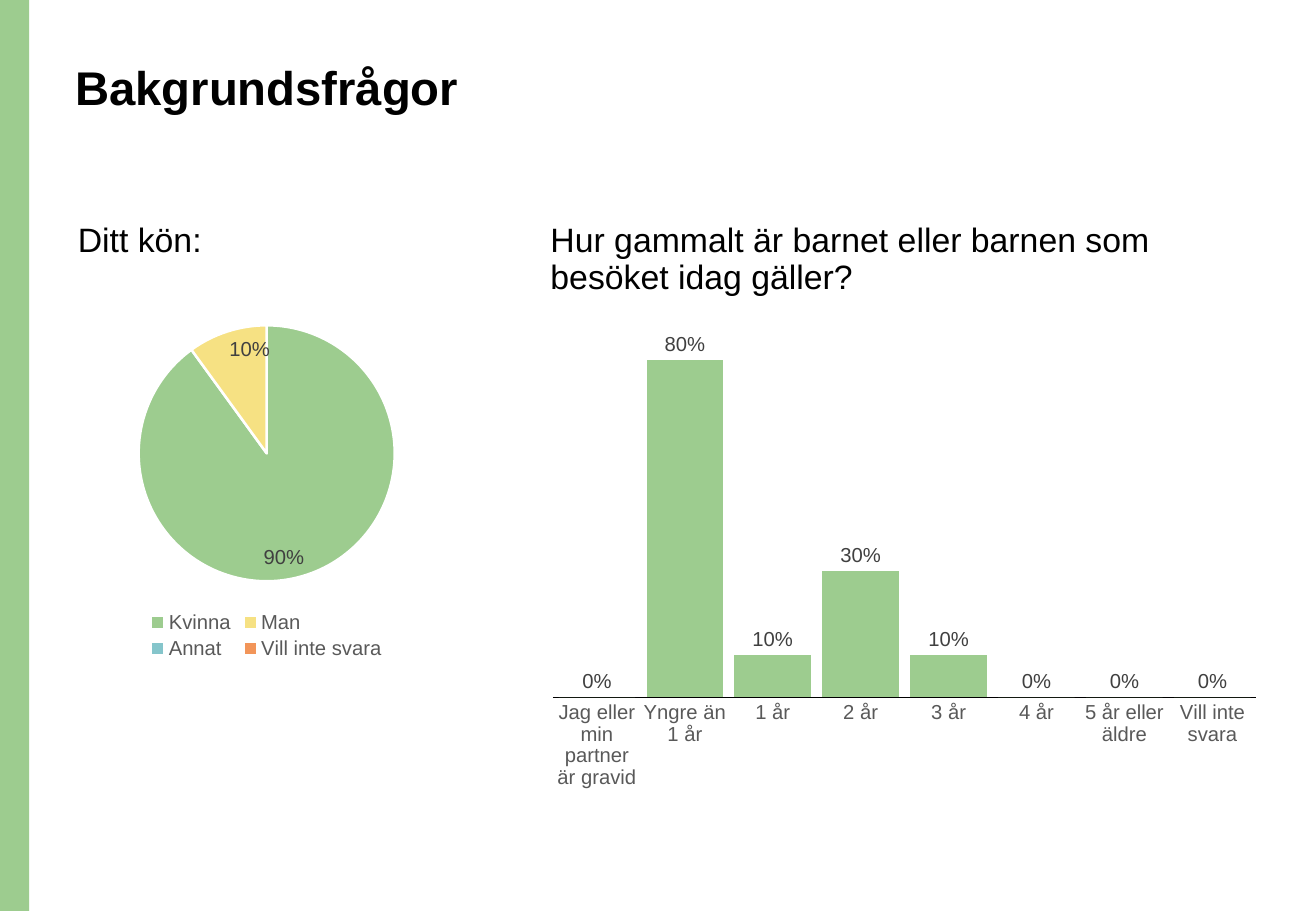
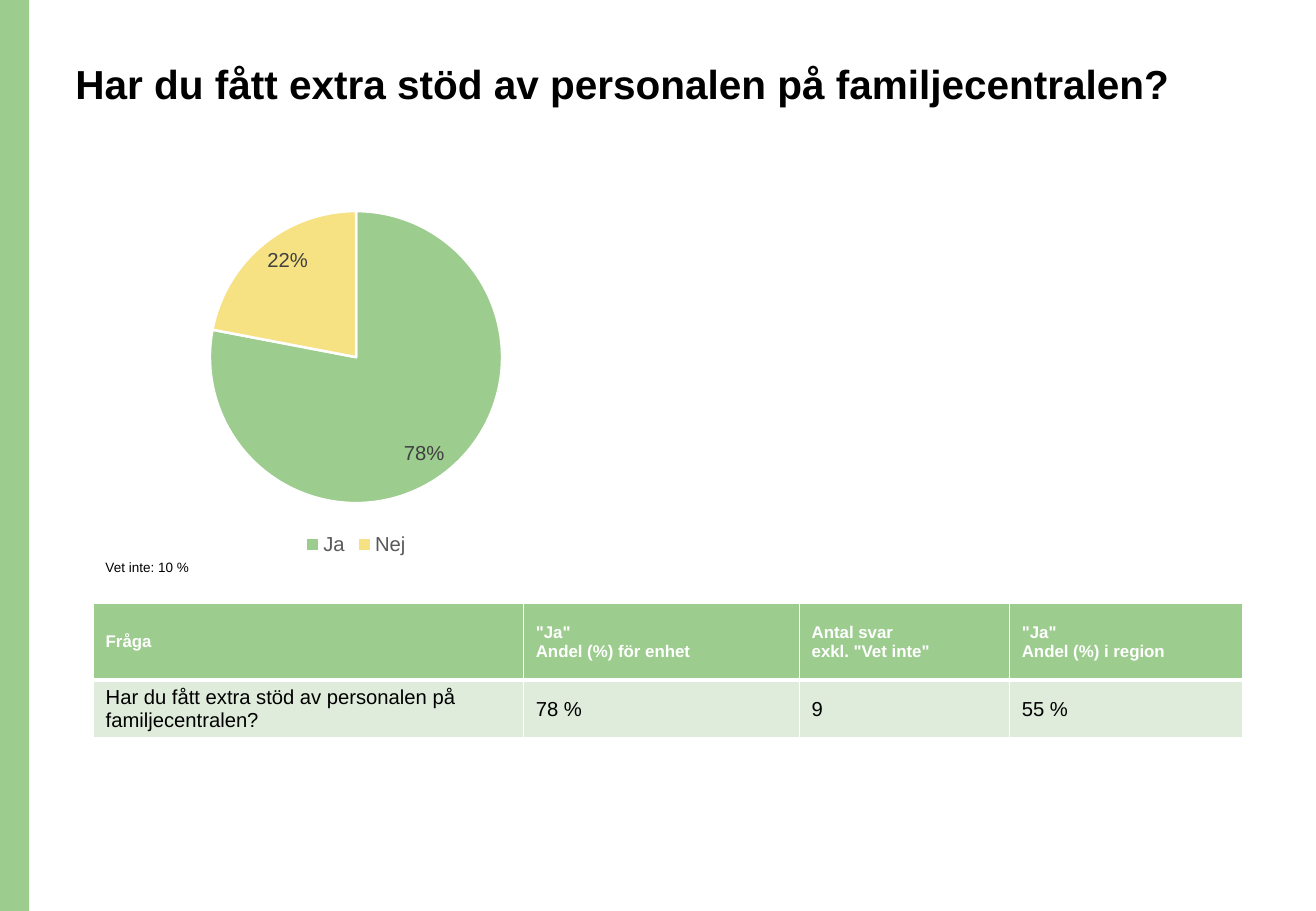
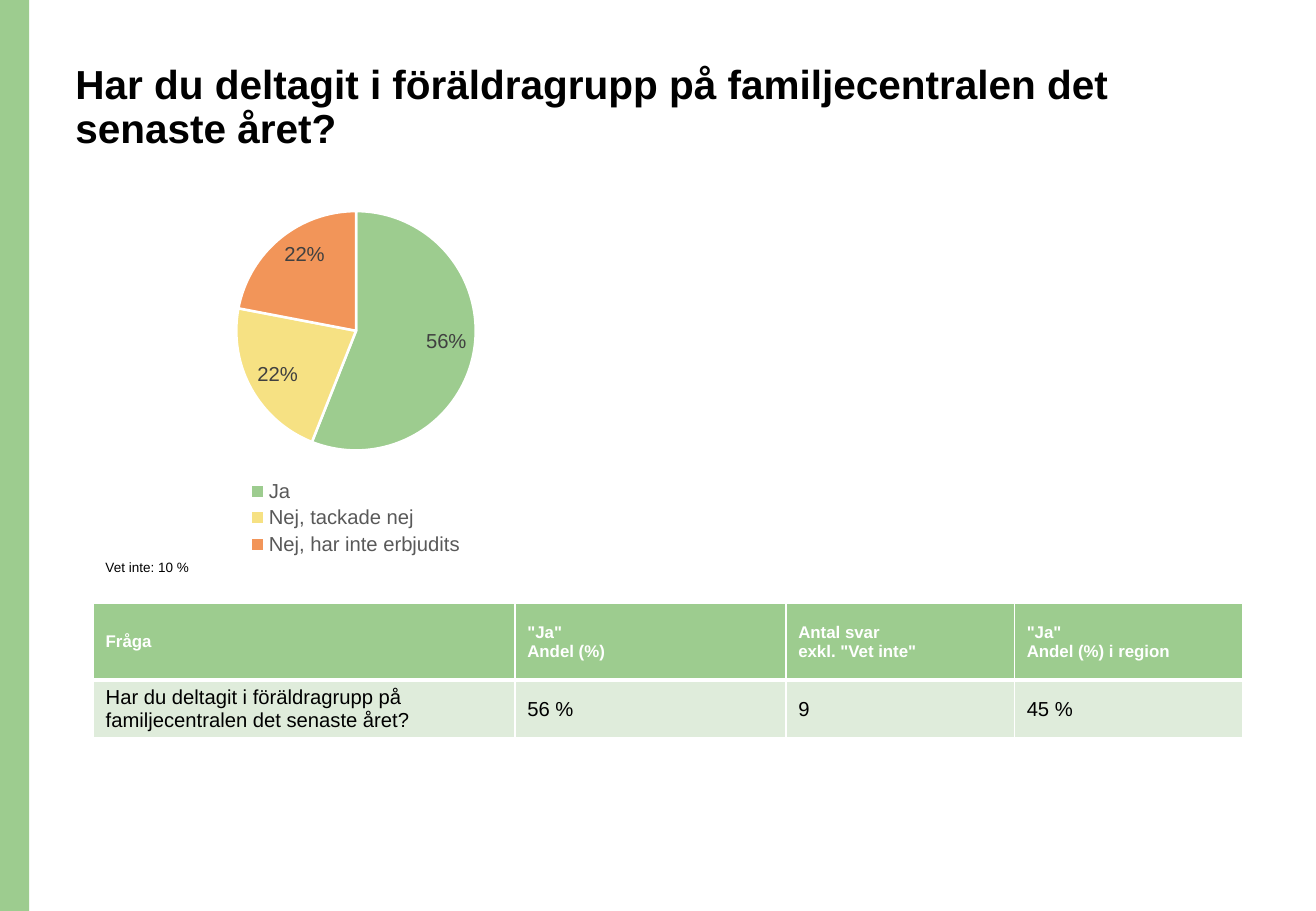
"""Build three survey result slides with charts and tables."""
from dataclasses import dataclass

import lxml.etree
import pptx
import pptx.chart.chart
import pptx.chart.data
import pptx.dml.color
import pptx.dml.fill
import pptx.enum.chart
import pptx.enum.shapes
import pptx.enum.text
import pptx.oxml.ns
import pptx.presentation
import pptx.shapes.base
import pptx.slide
import pptx.table
import pptx.text.text
import pptx.util

PX = 9144
FONT = "Arial"
COLORS = {
    "green": "9DCC8F",
    "yellow": "F6E183",
    "blue": "85C5CB",
    "orange": "F29559",
    "pale": "DFECDB",
    "white": "FFFFFF",
    "black": "000000",
    "label": "404040",
    "axis": "595959",
}
TITLE_BOX = (52, 48, 934, 102)
PIE_FORMAT = '[<0.01]"";[>0.01]0%'
TITLE_ONLY, COMPARISON = 5, 4

Box = tuple[int, int, int, int]


@dataclass(frozen=True)
class Answer:
    """One answer option with its share and colour."""

    label: str
    share: float
    color: str = "green"


@dataclass(frozen=True)
class Question:
    """One question slide with a pie and a summary table."""

    title: str
    answers: list[Answer]
    columns: list[int]
    unit_header: str
    row: list[str]


GENDER = [
    Answer("Kvinna", 0.9),
    Answer("Man", 0.1, "yellow"),
    Answer("Annat", 0, "blue"),
    Answer("Vill inte svara", 0, "orange"),
]
CHILD_AGE = [
    Answer("Jag eller min partner är gravid", 0),
    Answer("Yngre än 1 år", 0.8),
    Answer("1 år", 0.1),
    Answer("2 år", 0.3),
    Answer("3 år", 0.1),
    Answer("4 år", 0),
    Answer("5 år eller äldre", 0),
    Answer("Vill inte svara", 0),
]
QUESTIONS = [
    Question(
        "Har du fått extra stöd av personalen på familjecentralen?",
        [Answer("Ja", 0.78), Answer("Nej", 0.22, "yellow")],
        [354, 227, 173, 192],
        '"Ja"\nAndel (%) för enhet',
        ["78 %", "9", "55 %"],
    ),
    Question(
        "Har du deltagit i föräldragrupp på familjecentralen det senaste året?",
        [
            Answer("Ja", 0.56),
            Answer("Nej, tackade nej", 0.22, "yellow"),
            Answer("Nej, har inte erbjudits", 0.22, "orange"),
        ],
        [347, 223, 188, 188],
        '"Ja"\nAndel (%)',
        ["56 %", "9", "45 %"],
    ),
]


def rgb(name: str) -> pptx.dml.color.RGBColor:
    """Return a named colour."""
    return pptx.dml.color.RGBColor.from_string(COLORS[name])


def emu(box: Box) -> list[int]:
    """Turn a px box into EMU."""
    return [v * PX for v in box]


def paint(fill: pptx.dml.fill.FillFormat, color: str) -> None:
    """Make a fill solid in a named colour."""
    fill.solid()
    fill.fore_color.rgb = rgb(color)


def style(font: pptx.text.text.Font, size: int, color: str, bold: bool = False) -> None:
    """Set face, size, colour and weight of a font."""
    font.name = FONT
    font.size = pptx.util.Pt(size)
    font.bold = bold
    font.color.rgb = rgb(color)


def put_text(
    tf: pptx.text.text.TextFrame,
    text: str,
    *,
    size: int,
    color: str = "black",
    bold: bool = False,
    spacing: float = 1.0,
) -> None:
    """Write each line of text as a formatted paragraph."""
    for i, line in enumerate(text.split("\n")):
        p = tf.add_paragraph() if i else tf.paragraphs[0]
        p.alignment = pptx.enum.text.PP_ALIGN.LEFT
        p.line_spacing = spacing
        p.space_before = pptx.util.Pt(0)
        r = p.add_run()
        r.text = line
        style(r.font, size, color, bold)


def fill_placeholder(
    sp: pptx.shapes.base.BaseShape, box: Box, text: str, *, size: int, bold: bool = False
) -> None:
    """Move a placeholder and write its text from the top."""
    sp.left, sp.top, sp.width, sp.height = emu(box)
    tf = sp.text_frame
    tf.auto_size = pptx.enum.text.MSO_AUTO_SIZE.NONE
    tf.vertical_anchor = pptx.enum.text.MSO_ANCHOR.TOP
    put_text(tf, text, size=size, bold=bold, spacing=0.9)


def add_page(
    prs: pptx.presentation.Presentation, layout: int, title: str, size: int
) -> pptx.slide.Slide:
    """Add a slide with its title."""
    s = prs.slides.add_slide(prs.slide_layouts[layout])
    fill_placeholder(s.shapes.title, TITLE_BOX, title, size=size, bold=True)
    return s


def add_band(prs: pptx.presentation.Presentation, s: pptx.slide.Slide) -> None:
    """Put the side band on the slide master."""
    sp = s.shapes.add_shape(
        pptx.enum.shapes.MSO_SHAPE.RECTANGLE, *emu((0, 0, 24, 750))
    )
    sp.shadow.inherit = False
    paint(sp.fill, "green")
    sp.line.fill.background()
    sp.element.nvSpPr.cNvPr.set("id", "20")
    prs.slide_master.shapes.element.insert(2, sp.element)


def add_answers(
    s: pptx.slide.Slide,
    kind: pptx.enum.chart.XL_CHART_TYPE,
    box: Box,
    answers: list[Answer],
    number_format: str,
    position: pptx.enum.chart.XL_LABEL_POSITION,
) -> pptx.chart.chart.Chart:
    """Add a chart of answer shares with value labels."""
    data = pptx.chart.data.CategoryChartData()
    data.categories = [a.label for a in answers]
    data.add_series("Series 1", [a.share for a in answers])
    chart = s.shapes.add_chart(kind, *emu(box), data).chart
    chart.has_title = False
    chart.has_legend = False
    style(chart.font, 10, "black")
    plot = chart.plots[0]
    plot.has_data_labels = True
    labels = plot.data_labels
    labels.show_value = True
    labels.show_percentage = False
    labels.number_format = number_format
    labels.number_format_is_linked = False
    labels.position = position
    style(labels.font, 12, "label")
    return chart


def add_pie(s: pptx.slide.Slide, box: Box, answers: list[Answer]) -> None:
    """Add a pie with a legend below."""
    chart = add_answers(
        s,
        pptx.enum.chart.XL_CHART_TYPE.PIE,
        box,
        answers,
        PIE_FORMAT,
        pptx.enum.chart.XL_LABEL_POSITION.INSIDE_END,
    )
    chart.plots[0].vary_by_categories = True
    for i, a in enumerate(answers):
        fmt = chart.plots[0].series[0].points[i].format
        paint(fmt.fill, a.color)
        paint(fmt.line.fill, "white")
        fmt.line.width = pptx.util.Pt(1.5)
    chart.has_legend = True
    chart.legend.position = pptx.enum.chart.XL_LEGEND_POSITION.BOTTOM
    chart.legend.include_in_layout = False
    style(chart.legend.font, 12, "axis")


def add_columns(s: pptx.slide.Slide, box: Box, answers: list[Answer]) -> None:
    """Add a column chart with only a category axis."""
    chart = add_answers(
        s,
        pptx.enum.chart.XL_CHART_TYPE.COLUMN_CLUSTERED,
        box,
        answers,
        "0%",
        pptx.enum.chart.XL_LABEL_POSITION.OUTSIDE_END,
    )
    plot = chart.plots[0]
    plot.vary_by_categories = False
    plot.gap_width = 15
    plot.overlap = -27
    paint(plot.series[0].format.fill, "green")
    values = chart.value_axis
    values.visible = False
    values.has_major_gridlines = False
    values.minimum_scale = 0
    values.maximum_scale = 0.9
    cats = chart.category_axis
    cats.major_tick_mark = pptx.enum.chart.XL_TICK_MARK.NONE
    paint(cats.format.line.fill, "black")
    cats.format.line.width = pptx.util.Pt(0.75)
    style(cats.tick_labels.font, 12, "axis")
    for body in chart.element.xpath(".//c:catAx/c:txPr/a:bodyPr"):
        body.set("rot", "-60000000")
        body.set("vert", "horz")


def add_borders(cell: pptx.table._Cell, bottom: int) -> None:
    """Give a cell white borders with the bottom width in points."""
    qn = pptx.oxml.ns.qn
    tc_pr = cell._tc.get_or_add_tcPr()
    for side, width in (("L", 1), ("R", 1), ("T", 1), ("B", bottom)):
        ln = lxml.etree.SubElement(
            tc_pr, qn(f"a:ln{side}"), w=str(pptx.util.Pt(width))
        )
        solid = lxml.etree.SubElement(ln, qn("a:solidFill"))
        lxml.etree.SubElement(solid, qn("a:srgbClr"), val=COLORS["white"])


def add_summary(s: pptx.slide.Slide, q: Question) -> None:
    """Add the table of the question and its results."""
    headers = ["Fråga", q.unit_header, 'Antal svar\nexkl. "Vet inte"', '"Ja"\nAndel (%) i region']
    box = (77, 497, sum(q.columns), 93)
    table = s.shapes.add_table(2, len(headers), *emu(box)).table
    table.horz_banding = False
    for col, width in zip(table.columns, q.columns):
        col.width = width * PX
    for row, height in zip(table.rows, (63, 30)):
        row.height = height * PX
    for i, texts in enumerate((headers, [q.title, *q.row])):
        head = i == 0
        for j, text in enumerate(texts):
            cell = table.cell(i, j)
            add_borders(cell, 3 if head else 1)
            paint(cell.fill, "green" if head else "pale")
            cell.vertical_anchor = pptx.enum.text.MSO_ANCHOR.MIDDLE
            put_text(
                cell.text_frame,
                text,
                size=10 if head else 12,
                color="white" if head else "black",
                bold=head,
            )


def add_background(prs: pptx.presentation.Presentation) -> None:
    """Add the slide with the background questions."""
    s = add_page(prs, COMPARISON, "Bakgrundsfrågor", 28)
    add_band(prs, s)
    bodies = {sp.placeholder_format.idx: sp for sp in s.placeholders}
    fill_placeholder(bodies[1], (54, 179, 458, 46), "Ditt kön:", size=20)
    fill_placeholder(
        bodies[3],
        (443, 179, 603, 74),
        "Hur gammalt är barnet eller barnen som besöket idag gäller?",
        size=20,
    )
    for idx in (2, 4):
        el = bodies[idx].element
        el.getparent().remove(el)
    add_pie(s, (53, 254, 333, 293), GENDER)
    add_columns(s, (443, 254, 603, 403), CHILD_AGE)


def add_question(prs: pptx.presentation.Presentation, q: Question) -> None:
    """Add the slide of one question."""
    s = add_page(prs, TITLE_ONLY, q.title, 24)
    add_pie(s, (122, 160, 342, 301), q.answers)
    add_summary(s, q)
    tf = s.shapes.add_textbox(*emu((77, 449, 210, 48))).text_frame
    tf.word_wrap = True
    put_text(tf, "Vet inte: 10 %", size=8, spacing=1.5)


def main() -> None:
    """Build and save the presentation."""
    prs = pptx.Presentation()
    prs.slide_width, prs.slide_height = 1083 * PX, 750 * PX
    add_background(prs)
    for q in QUESTIONS:
        add_question(prs, q)
    prs.save("out.pptx")


if __name__ == "__main__":
    main()
